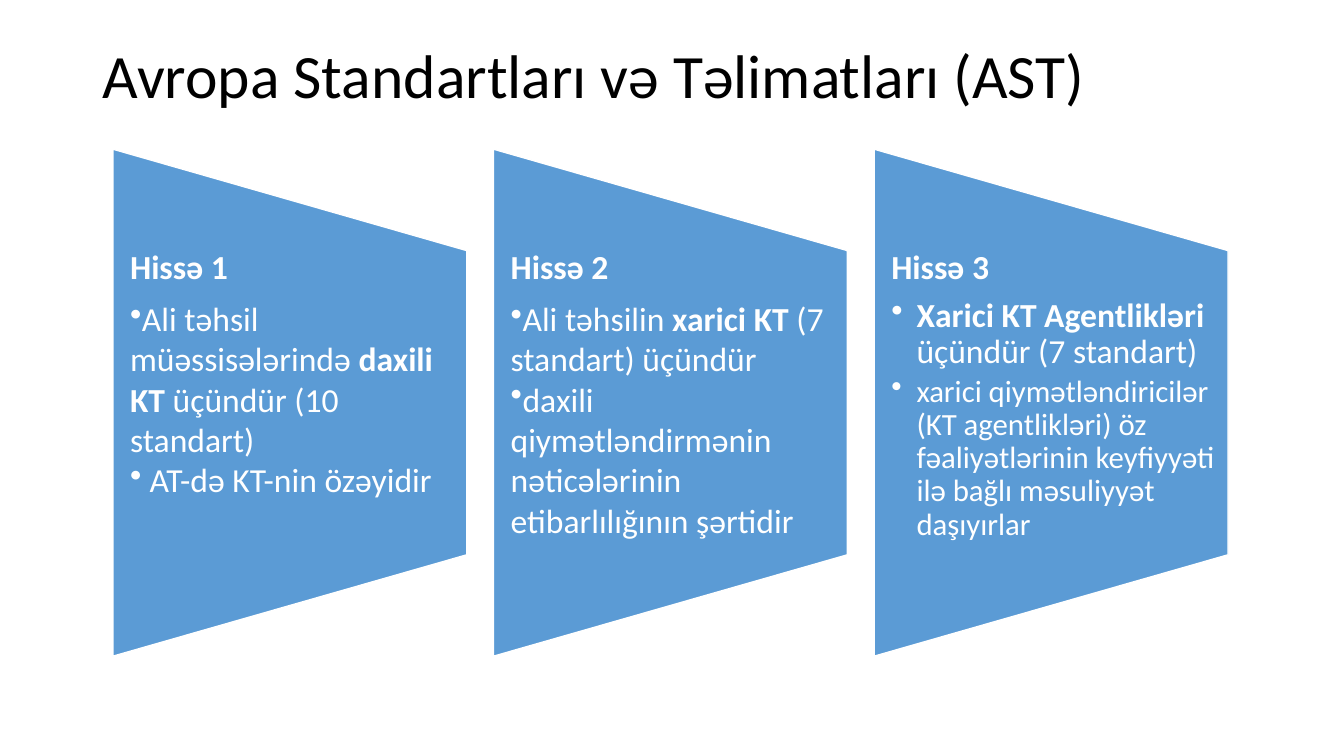
from pptx import Presentation
from pptx.dml.color import RGBColor
from pptx.enum.shapes import MSO_SHAPE as Shape
from pptx.enum.text import MSO_ANCHOR as Anchor
from pptx.oxml.ns import qn
from pptx.util import Inches, Pt
from lxml.etree import SubElement

TITLE = "Avropa Standartları və Təlimatları (AST)"
PARTS = [
    {"head": "Hissə 1", "hang": 0, "lead": 1, "after": 0, "items": [
        (24, [("Ali təhsil müəssisələrində ", False), ("daxili KT", True),
              (" üçündür (10 standart)", False)]),
        (24, [(" AT-də KT-nin özəyidir", False)])]},
    {"head": "Hissə 2", "hang": 0, "lead": 1, "after": 0, "items": [
        (24, [("Ali təhsilin ", False), ("xarici KT ", True),
              ("(7 standart) üçündür", False)]),
        (24, [("daxili qiymətləndirmənin nəticələrinin etibarlılığının şərtidir", False)])]},
    {"head": "Hissə 3", "hang": 0.25, "lead": 0.9, "after": 3.6, "items": [
        (24, [("Xarici KT Agentlikləri ", True), ("üçündür (7 standart)", False)]),
        (22, [("xarici qiymətləndiricilər (KT agentlikləri) öz fəaliyətlərinin "
               "keyfiyyəti ilə bağlı məsuliyyət daşıyırlar", False)])]},
]
COLORS = {"ink": "000000", "panel": "5B9BD5", "white": "FFFFFF"}
FONT = "Calibri"
LEFT, STEP, MID = 1.12, 3.775, 3.995
WIDE, TALL = 3.51, 5.03
TEXT_TOP, TEXT_TALL = 2.48, 3.02


def color(name):
    return RGBColor.from_string(COLORS[name])


def add_box(slide, x, y, w, h, pads):
    box = slide.shapes.add_textbox(Inches(x), Inches(y), Inches(w), Inches(h))
    frame = box.text_frame
    frame.word_wrap = True
    frame.vertical_anchor = Anchor.TOP
    frame.margin_left, frame.margin_top, frame.margin_right, frame.margin_bottom = map(Inches, pads)
    return frame


def fill_para(para, runs, size, ink, lead, after=0):
    para.line_spacing = lead
    para.space_after = Pt(after)
    for text, bold in runs:
        run = para.add_run()
        run.text = text
        run.font.name = FONT
        run.font.size = Pt(size)
        run.font.bold = bold
        run.font.color.rgb = color(ink)


def add_bullet(para, hang):
    props = para._p.get_or_add_pPr()
    props.set("marL", str(Inches(hang)))
    props.set("indent", str(-Inches(hang)))
    SubElement(props, qn("a:buChar")).set("char", "•")


def add_panel(slide, x):
    panel = slide.shapes.add_shape(
        Shape.FLOWCHART_MANUAL_OPERATION, Inches(x + (WIDE - TALL) / 2),
        Inches(MID - WIDE / 2), Inches(TALL), Inches(WIDE))
    panel.rotation = 270
    panel.shadow.inherit = False
    panel.fill.solid()
    panel.fill.fore_color.rgb = color("panel")
    panel.line.color.rgb = color("white")
    panel.line.width = Pt(1)


def add_part(slide, x, part):
    add_panel(slide, x)
    frame = add_box(slide, x, TEXT_TOP, WIDE, TEXT_TALL, (0.17, 0, 0.12, 0))
    fill_para(frame.paragraphs[0], [(part["head"], True)], 24, "white", 0.9, 8.4)
    for size, runs in part["items"]:
        para = frame.add_paragraph()
        fill_para(para, runs, size, "white", part["lead"], part["after"])
        add_bullet(para, part["hang"])


def main():
    """Build the slide with a title and three trapezoid panels."""
    deck = Presentation()
    deck.slide_width, deck.slide_height = Inches(13.33), Inches(7.5)
    slide = deck.slides.add_slide(deck.slide_layouts[6])
    title = add_box(slide, 0.92, 0.4, 11.5, 1.45, (0.1, 0.05, 0.1, 0.05))
    fill_para(title.paragraphs[0], [(TITLE, False)], 44, "ink", 0.9)
    for i, part in enumerate(PARTS):
        add_part(slide, LEFT + i * STEP, part)
    deck.save("out.pptx")


if __name__ == "__main__":
    main()
